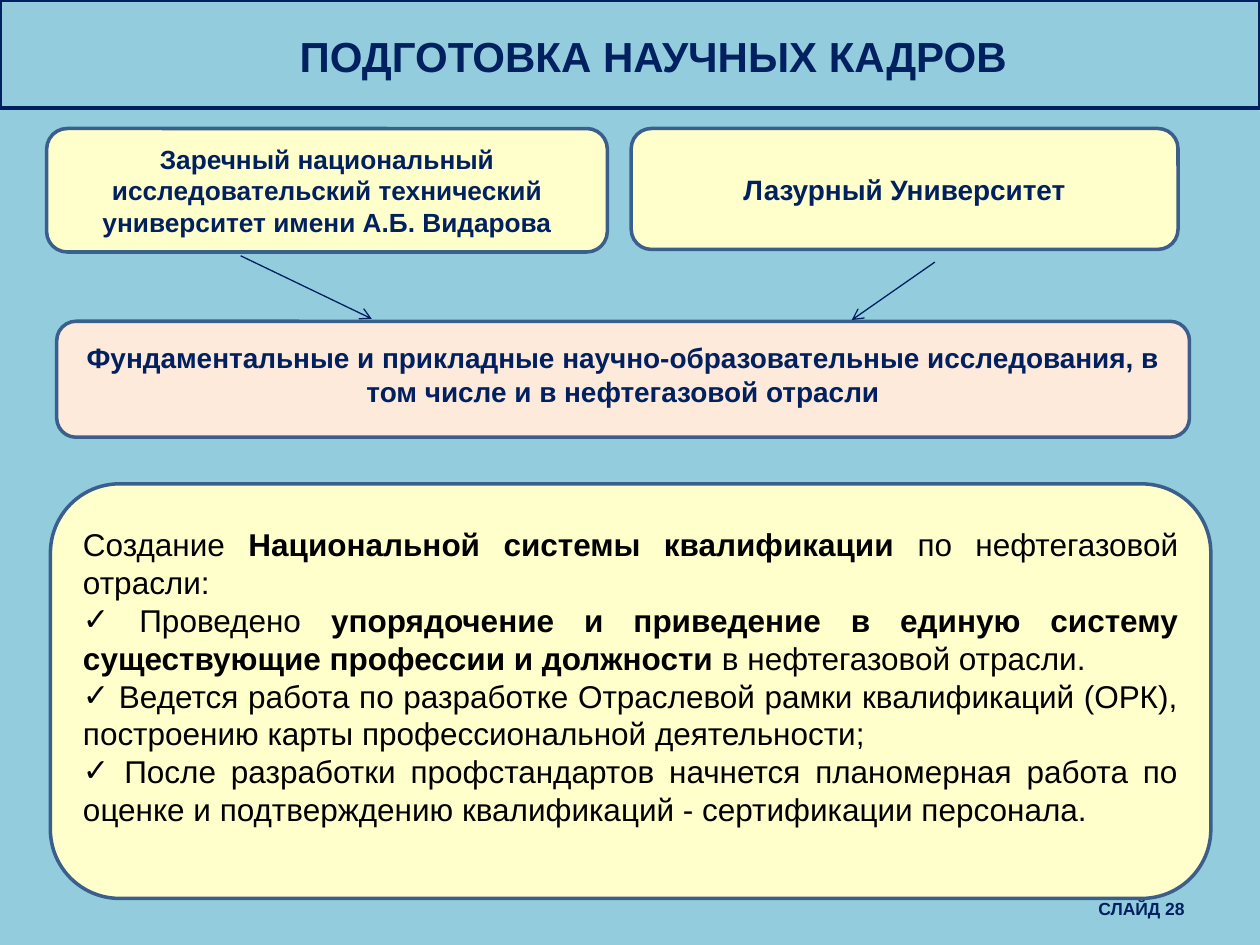
"""Build the slide on training of research staff."""
from dataclasses import dataclass

from lxml import etree
from pptx import Presentation
from pptx import util as u
from pptx.dml.color import RGBColor
from pptx.enum import shapes, text
from pptx.oxml import ns

HUE = {"sky": "93CDDD", "navy": "002060", "cream": "FFFFCC",
       "peach": "FDEADA", "edge": "3A5F8C", "black": "000000"}
ALIGN = text.PP_ALIGN
KIND = shapes.MSO_SHAPE


@dataclass
class Run:
    """A piece of text with one weight."""
    words: str
    bold: bool = True


@dataclass
class Para:
    """A paragraph, with a tick if listed."""
    runs: list[Run]
    tick: bool = False


@dataclass
class Style:
    """The look of a block of text."""
    size: int
    hue: str = "navy"
    align: ALIGN = ALIGN.CENTER
    base: float = 0.05


@dataclass
class Box:
    """A filled rounded box with text."""
    at: tuple[float, float, float, float]
    fill: str
    style: Style
    paras: list[Para]


@dataclass
class Arrow:
    """A straight arrow between two points."""
    start: tuple[float, float]
    end: tuple[float, float]


def rgb(name: str) -> RGBColor:
    """Look up a colour."""
    return RGBColor.from_string(HUE[name])


def write(shape, style: Style, paras: list[Para]) -> None:
    """Fill a shape with styled paragraphs."""
    frame = shape.text_frame
    frame.word_wrap = True
    frame.vertical_anchor = text.MSO_ANCHOR.MIDDLE
    frame.margin_bottom = u.Inches(style.base)
    for i, para in enumerate(paras):
        line = frame.add_paragraph() if i else frame.paragraphs[0]
        line.alignment = style.align
        if para.tick:
            props = line._p.get_or_add_pPr()
            etree.SubElement(props, ns.qn("a:buFont"), typeface="Arial")
            etree.SubElement(props, ns.qn("a:buChar"), char="✓")
        for item in para.runs:
            run = line.add_run()
            run.text = item.words
            font = run.font
            font.name, font.size, font.bold = "Arial", u.Pt(style.size), item.bold
            font.color.rgb = rgb(style.hue)


def label(slide, at: tuple, style: Style, words: str) -> None:
    """Add a one-line text box."""
    shape = slide.shapes.add_textbox(*map(u.Inches, at))
    write(shape, style, [Para([Run(words)])])


def panel(slide, kind: KIND, at: tuple, edge: str, fill: str = ""):
    """Add an outlined shape, filled if a colour is given."""
    shape = slide.shapes.add_shape(kind, *map(u.Inches, at))
    shape.shadow.inherit = False
    shape.line.color.rgb, shape.line.width = rgb(edge), u.Pt(2)
    if fill:
        shape.fill.solid()
        shape.fill.fore_color.rgb = rgb(fill)
    else:
        shape.fill.background()
    return shape


def draw(slide, box: Box) -> None:
    """Add a rounded text box."""
    shape = panel(slide, KIND.ROUNDED_RECTANGLE, box.at, "edge", box.fill)
    write(shape, box.style, box.paras)


def point(slide, arrow: Arrow) -> None:
    """Add an arrow."""
    ends = map(u.Inches, arrow.start + arrow.end)
    link = slide.shapes.add_connector(shapes.MSO_CONNECTOR.STRAIGHT, *ends)
    link.line.color.rgb, link.line.width = rgb("navy"), u.Pt(0.75)
    etree.SubElement(link.line._get_or_add_ln(), ns.qn("a:tailEnd"), type="arrow")
    etree.SubElement(link._element.spPr, ns.qn("a:effectLst"))


BOXES = [
    Box((0.37, 1.02, 4.45, 0.98), "cream", Style(15), [Para([Run(
        "Заречный национальный исследовательский технический "
        "университет имени А.Б. Видарова")])]),
    Box((5.01, 1.02, 4.34, 0.96), "cream", Style(16),
        [Para([Run("Лазурный Университет")])]),
    Box((0.45, 2.55, 8.99, 0.92), "peach", Style(16, base=0.13), [Para([Run(
        "Фундаментальные и прикладные научно-образовательные исследования, "
        "в том числе и в нефтегазовой отрасли")])]),
    Box((0.4, 3.84, 9.21, 3.29), "cream",
        Style(18, "black", ALIGN.JUSTIFY, 0.28), [
            Para([Run("Создание ", False),
                  Run("Национальной системы квалификации "),
                  Run("по нефтегазовой отрасли:", False)]),
            Para([Run(" Проведено ", False),
                  Run("упорядочение и приведение в единую систему "
                      "существующие профессии и должности"),
                  Run(" в нефтегазовой отрасли.", False)], True),
            Para([Run(" Ведется работа по разработке Отраслевой рамки "
                      "квалификаций (ОРК), построению карты "
                      "профессиональной деятельности;", False)], True),
            Para([Run(" После разработки профстандартов начнется планомерная "
                      "работа по оценке и подтверждению квалификаций - "
                      "сертификации персонала.", False)], True)]),
]
ARROWS = [Arrow((1.91, 2.03), (2.95, 2.53)), Arrow((7.42, 2.08), (6.76, 2.54))]


def main() -> None:
    """Build and save the slide."""
    deck = Presentation()
    deck.slide_width, deck.slide_height = u.Inches(10), u.Inches(7.5)
    slide = deck.slides.add_slide(deck.slide_layouts[6])
    slide.background.fill.solid()
    slide.background.fill.fore_color.rgb = rgb("sky")
    label(slide, (7.17, 7.07, 2.33, 0.28), Style(10, align=ALIGN.RIGHT), "СЛАЙД 28")
    label(slide, (0.37, 0.19, 9.63, 0.5), Style(24), "ПОДГОТОВКА НАУЧНЫХ КАДРОВ")
    panel(slide, KIND.RECTANGLE, (0, 0, 10, 0.86), "navy")
    for box in BOXES:
        draw(slide, box)
    for arrow in ARROWS:
        point(slide, arrow)
    deck.save("out.pptx")


if __name__ == "__main__":
    main()
